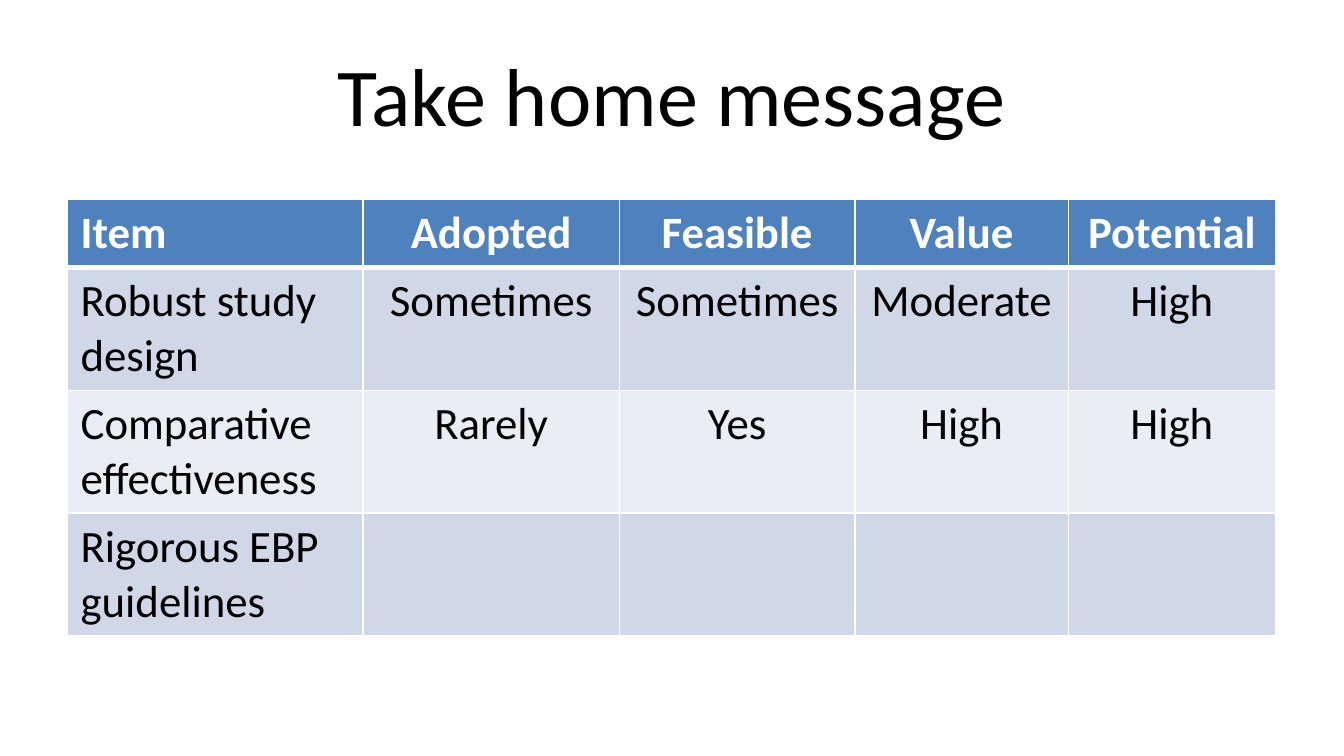
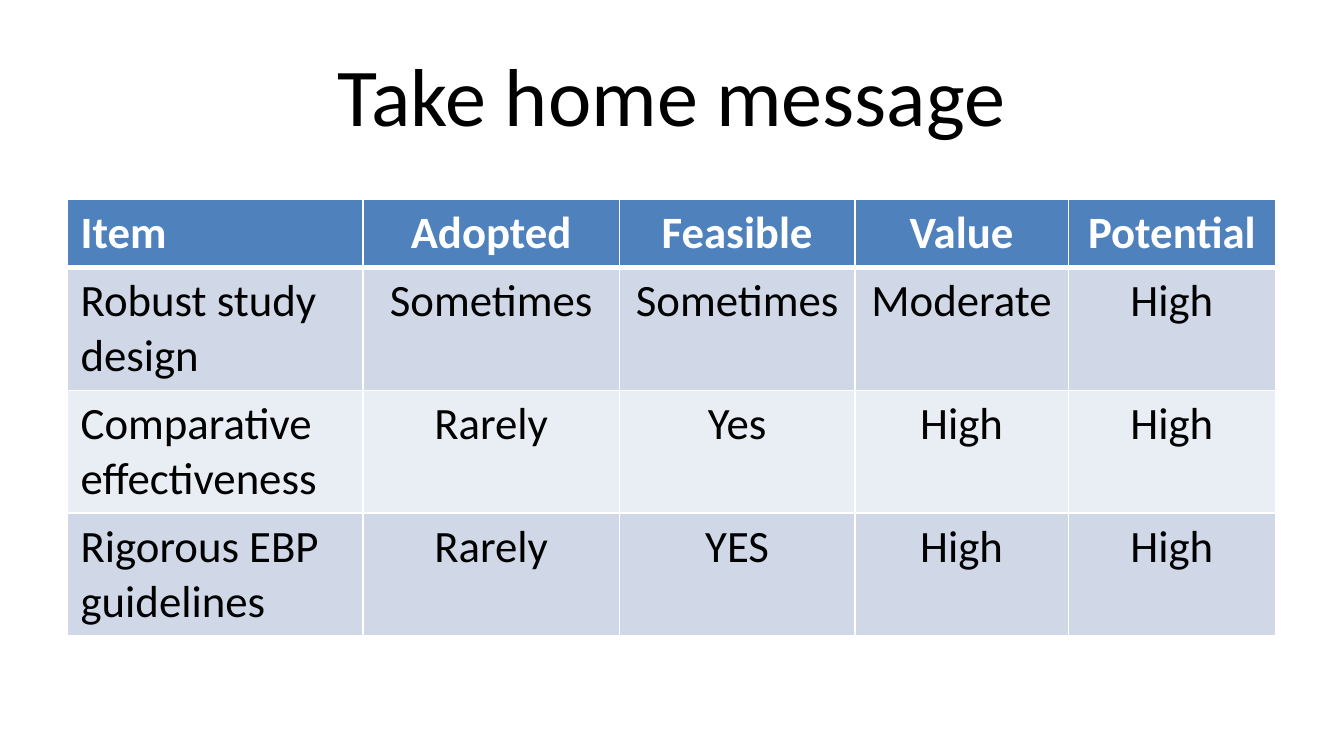
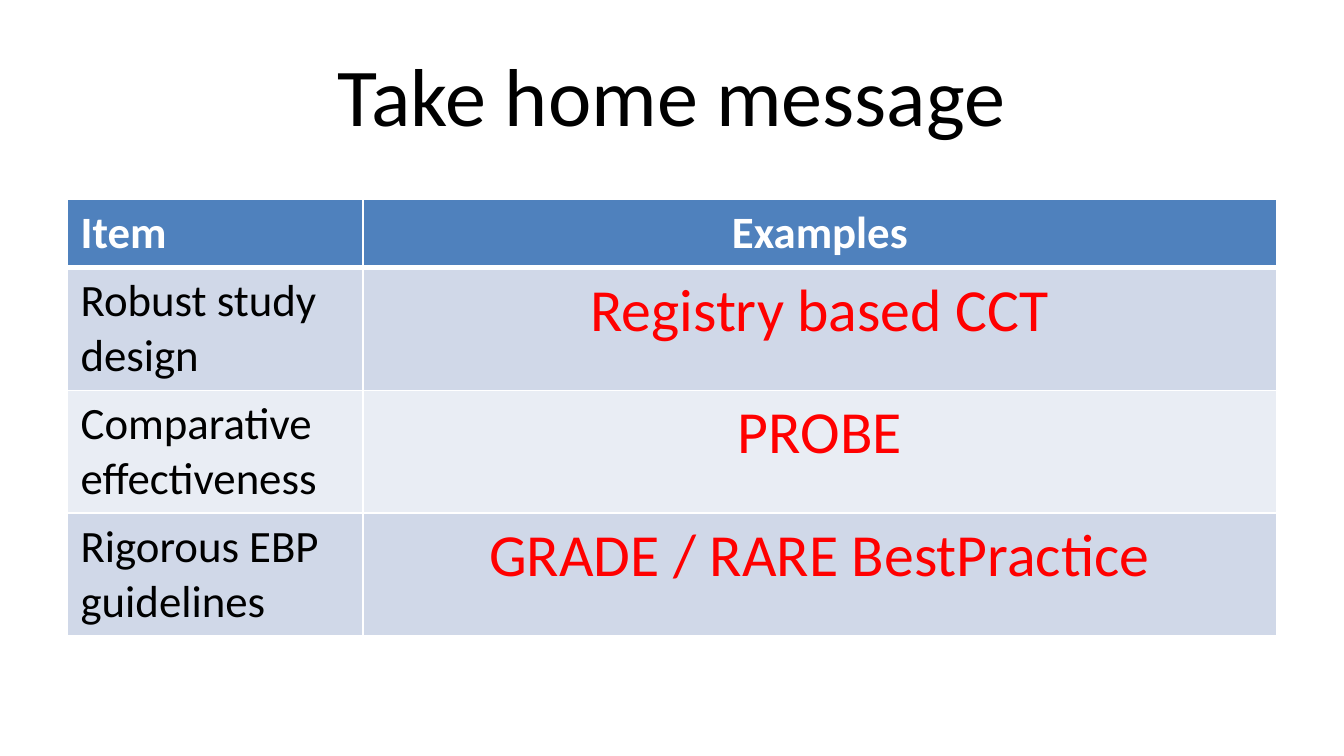
import pptx
import pptx.util
import pptx.dml.color
import pptx.enum.text
import pptx.oxml
import pptx.oxml.ns

RGB = pptx.dml.color.RGBColor
ALIGN = pptx.enum.text.PP_ALIGN
BLACK = RGB(0, 0, 0)
WHITE = RGB(255, 255, 255)
RED = RGB(255, 0, 0)
BLUE = RGB(0x4F, 0x81, 0xBD)
BANDS = [RGB(0xD0, 0xD8, 0xE8), RGB(0xE9, 0xED, 0xF4)]
FONT = "Calibri"
WIDE = pptx.util.Pt(720)
HIGH = pptx.util.Pt(405)
GRID_COLS = 20
GRID_ROWS = 24
ROW = pptx.util.Inches(0.41)

TITLE = "Take home message"
ITEMS = ["Robust study design", "Comparative effectiveness",
         "Rigorous EBP guidelines"]
RATES = ["Adopted", "Feasible", "Value", "Potential"]
FIRST = ["Sometimes", "Sometimes", "Moderate", "High"]
NEXT = ["Rarely", "Yes", "High", "High"]
LAST = ["Rarely", "YES", "High", "High"]
CASES = [["Registry based CCT"], ["PROBE"], ["GRADE / RARE BestPractice"]]
COLS = [2.2, 1.91, 1.75, 1.59, 1.54]
PAIR = [2.2, 6.8]


def place(col, row, cols, rows):
    return (round(WIDE * col / GRID_COLS), round(HIGH * row / GRID_ROWS),
            round(WIDE * cols / GRID_COLS), round(HIGH * rows / GRID_ROWS))


def style(para, size, color, bold=False, align=ALIGN.CENTER):
    para.alignment = align
    para.font.name = FONT
    para.font.size = pptx.util.Pt(size)
    para.font.bold = bold
    para.font.color.rgb = color


def add_title(slide, text):
    title = slide.shapes.title
    title.left, title.top, title.width, title.height = place(1, 0.96, 18, 4)
    frame = title.text_frame
    frame.text = text
    frame.vertical_anchor = pptx.enum.text.MSO_ANCHOR.MIDDLE
    style(frame.paragraphs[0], 44, BLACK)


def set_edge(cell, side, points):
    space = pptx.oxml.ns.nsdecls("a")
    width = pptx.util.Pt(points)
    line = pptx.oxml.parse_xml(
        f'<a:ln{side} {space} w="{width}"><a:solidFill>'
        f'<a:srgbClr val="{WHITE}"/></a:solidFill></a:ln{side}>')
    cell._tc.get_or_add_tcPr().append(line)


def fill_cell(cell, text, row, col, size, color):
    head = row == 0
    edges = {"L": 1, "R": 1, "T": 3 if row == 1 else 1, "B": 3 if head else 1}
    for side, points in edges.items():
        set_edge(cell, side, points)
    cell.fill.solid()
    cell.fill.fore_color.rgb = BLUE if head else BANDS[(row - 1) % 2]
    if not text:
        return
    cell.text = text
    para = cell.text_frame.paragraphs[0]
    align = ALIGN.LEFT if col == 0 else ALIGN.CENTER
    if head:
        style(para, 24, WHITE, True, align)
    elif col == 0:
        style(para, 24, BLACK, align=align)
    else:
        style(para, size, color, align=align)


def add_grid(slide, heads, values, widths, size, color):
    rows = [["Item"] + heads]
    rows += [[item] + vals for item, vals in zip(ITEMS, values)]
    spot = place(1, 6.33, 18, 13.65)
    frame = slide.shapes.add_table(len(rows), len(widths), *spot)
    table = frame.table
    for col, width in zip(table.columns, widths):
        col.width = pptx.util.Inches(width)
    for r, texts in enumerate(rows):
        table.rows[r].height = ROW
        for c, text in enumerate(texts):
            fill_cell(table.cell(r, c), text, r, c, size, color)
    frame.width, frame.height = spot[2:]


def main():
    deck = pptx.Presentation()
    deck.slide_width, deck.slide_height = WIDE, HIGH
    plans = [
        (RATES, [FIRST, NEXT, [""] * len(RATES)], COLS, 24, BLACK),
        (RATES, [FIRST, NEXT, LAST], COLS, 24, BLACK),
        (["Examples"], CASES, PAIR, 32, RED),
    ]
    for plan in plans:
        slide = deck.slides.add_slide(deck.slide_layouts[5])
        add_title(slide, TITLE)
        add_grid(slide, *plan)
    deck.save("out.pptx")


if __name__ == "__main__":
    main()
